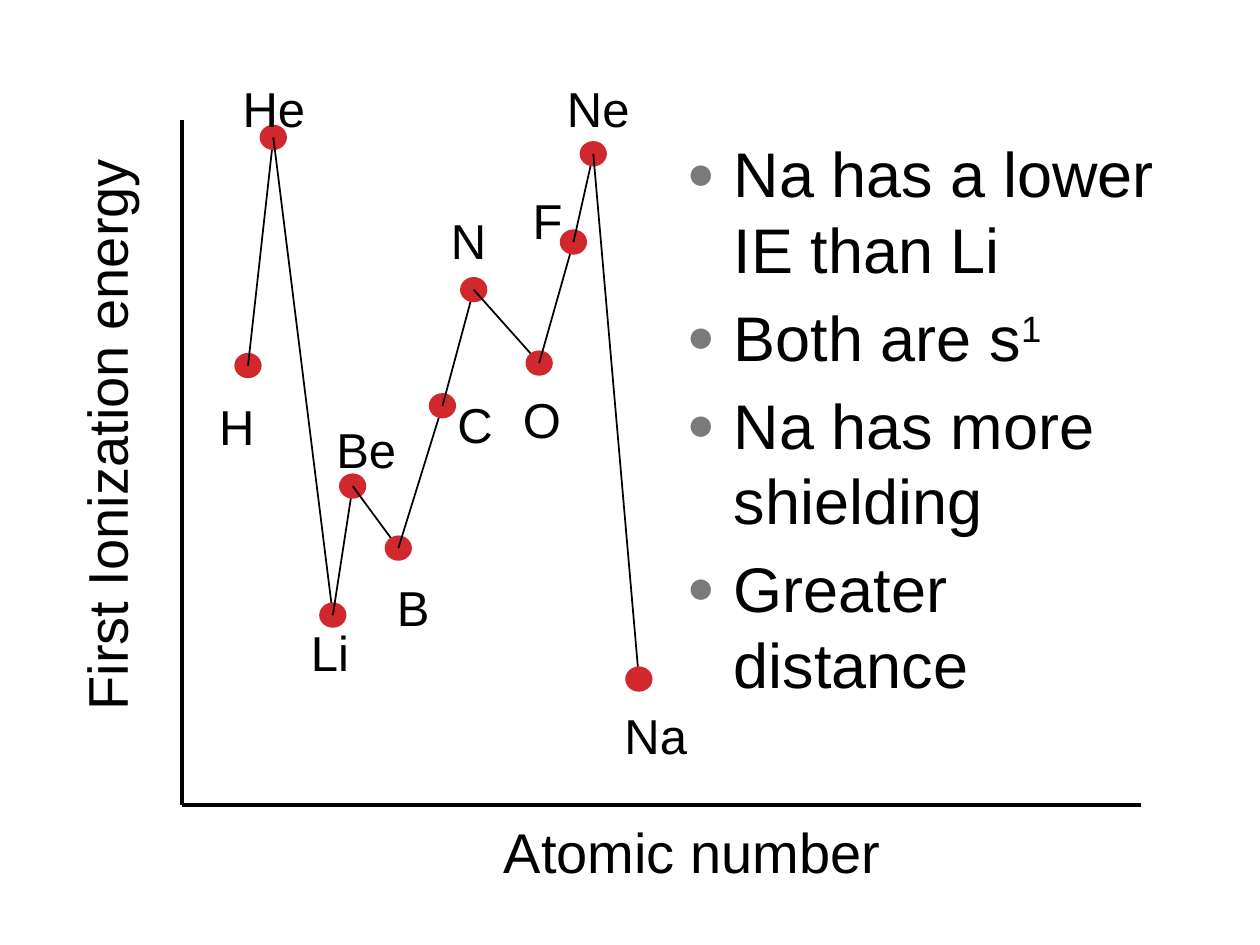
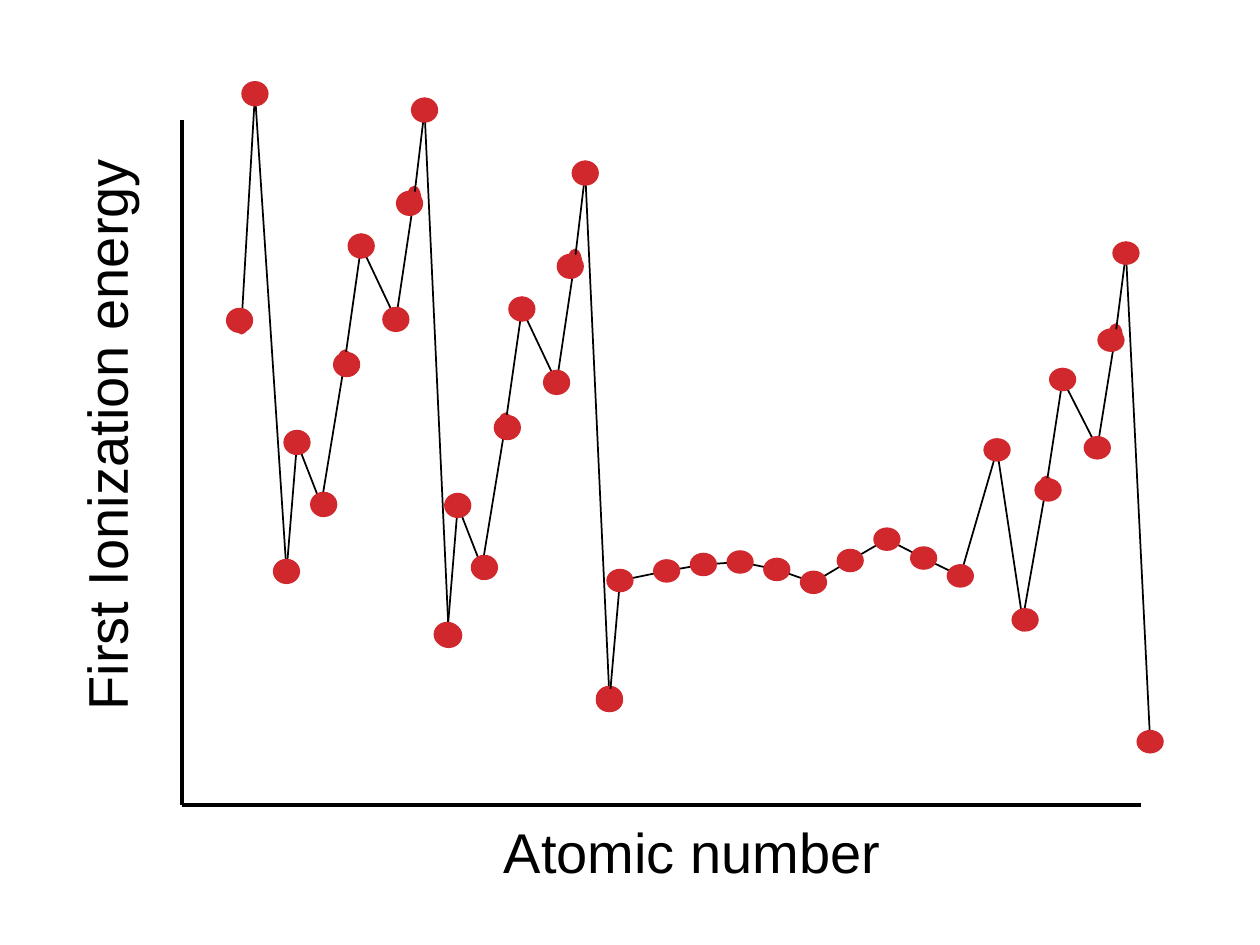
"""Build two slides that plot first ionization energy against atomic number."""
import dataclasses
import itertools

import pptx
import pptx.dml.color
import pptx.enum.shapes
import pptx.enum.text
import pptx.oxml.ns
import pptx.util
from lxml import etree

Cm = pptx.util.Cm
Pt = pptx.util.Pt
qn = pptx.oxml.ns.qn

COLORS = {"ink": "000000", "dot": "D1282E", "bullet": "7A7A7A"}
FONT = "Arial"
SIZES = {"label": 28, "axis": 32, "body": 36}
LINE_WEIGHTS = {"link": 1, "axis": 2}
DOT_WIDTH, DOT_HEIGHT = 0.55, 0.51
LABEL_WIDTHS = {1: 1.55, 2: 1.85}
LABEL_HEIGHT = 1.45
AXIS_LEFT, AXIS_RIGHT = 3.67, 23.01
AXIS_TOP, AXIS_BOTTOM = 2.41, 16.23
BULLET_INDENT = 0.95


@dataclasses.dataclass
class Atom:
    """Hold an element's dot centre, the offset of its label and the drift of its dot when squeezed."""
    symbol: str
    centre: tuple
    label_offset: tuple
    drift: tuple = (0, 0)


@dataclasses.dataclass
class Frame:
    """Map the base curve to a place on a slide by scaling and shifting it."""
    x_scale: float = 1
    y_scale: float = 1
    x_shift: float = 0
    y_shift: float = 0

    def place(self, point):
        x, y = point
        return x * self.x_scale + self.x_shift, y * self.y_scale + self.y_shift


HYDROGEN_TO_SODIUM = [
    Atom("H", (5, 7.37), (-0.83, 0.5), (-0.04, -0.03)),
    Atom("He", (5.51, 2.77), (-0.87, -1.32)),
    Atom("Li", (6.71, 12.4), (-0.69, 0.02)),
    Atom("Be", (7.11, 9.8), (-0.58, -1.47)),
    Atom("B", (8.03, 11.05), (-0.28, 0.46), (0.05, 0)),
    Atom("C", (8.92, 8.18), (0.05, -0.36), (0.04, 0.05)),
    Atom("N", (9.55, 5.84), (-0.71, -1.72)),
    Atom("O", (10.87, 7.32), (-0.58, 0.4)),
    Atom("F", (11.56, 4.88), (-1.07, -1.17), (-0.09, 0.1)),
    Atom("Ne", (11.96, 3.1), (-0.78, -1.65)),
    Atom("Na", (12.88, 13.69), (-0.54, 0.41)),
]
LITHIUM_TO_SODIUM = HYDROGEN_TO_SODIUM[2:]
S_BLOCK = LITHIUM_TO_SODIUM[:2]
P_BLOCK_ONWARD = LITHIUM_TO_SODIUM[2:]

SQUEEZE, LOWERED = 0.53, 0.93
FULL_SIZE = Frame()
FIRST_PERIODS = Frame(SQUEEZE, 1, 2.22, -0.88)
THIRD_PERIOD = Frame(SQUEEZE, 1, 5.46, 0.39)
FOURTH_S_BLOCK = Frame(SQUEEZE, LOWERED, 8.73, 2.59)
FOURTH_P_BLOCK = Frame(SQUEEZE, LOWERED, 16.36, 2.22)

METAL_LEFT, METAL_STEP = 13.44, 0.74
METAL_HEIGHTS = [11.51, 11.38, 11.33, 11.48, 11.74, 11.3, 10.87, 11.25, 11.61, 9.07]

SODIUM_NOTES = [
    [("Na has a lower IE than Li", False)],
    [("Both are s", False), ("1", True)],
    [("Na has more shielding", False)],
    [("Greater distance", False)],
]


class Deck:
    """Hold the shared style and the current slide."""

    def __init__(self):
        self.presentation = pptx.Presentation()
        self.presentation.slide_width = Cm(25.4)
        self.presentation.slide_height = Cm(19.05)
        self.slide = None

    def color(self, name):
        return pptx.dml.color.RGBColor.from_string(COLORS[name])

    def add_slide(self, layout):
        self.slide = self.presentation.slides.add_slide(
            self.presentation.slide_layouts.get_by_name(layout))
        title = self.slide.shapes.title
        if title is not None:
            title.element.getparent().remove(title.element)

    def run(self, paragraph, text, role, raised=False):
        run = paragraph.add_run()
        run.text = text
        run.font.name = FONT
        run.font.size = Pt(SIZES[role])
        run.font.color.rgb = self.color("ink")
        if raised:
            run._r.get_or_add_rPr().set("baseline", "30000")

    def text(self, text, left, top, width, height, role, rotation=0):
        box = self.slide.shapes.add_textbox(Cm(left), Cm(top), Cm(width), Cm(height))
        box.rotation = rotation
        box.text_frame.word_wrap = True
        self.run(box.text_frame.paragraphs[0], text, role)

    def stroke(self, shape, role):
        shape.line.color.rgb = self.color("ink")
        shape.line.width = Pt(LINE_WEIGHTS[role])

    def line(self, start, end, role="link"):
        connector = self.slide.shapes.add_connector(
            pptx.enum.shapes.MSO_CONNECTOR.STRAIGHT,
            *(Cm(value) for value in (*start, *end)))
        self.stroke(connector, role)
        etree.SubElement(connector._element.spPr, qn("a:effectLst"))

    def curve(self, points):
        corners = [(Cm(x), Cm(y)) for x, y in points]
        builder = self.slide.shapes.build_freeform(*corners[0])
        builder.add_line_segments(corners[1:], close=False)
        shape = builder.convert_to_shape()
        shape.shadow.inherit = False
        shape.fill.background()
        self.stroke(shape, "link")

    def dot(self, centre, x_scale=1, y_scale=1):
        width, height = DOT_WIDTH * x_scale, DOT_HEIGHT * y_scale
        x, y = centre
        shape = self.slide.shapes.add_shape(
            pptx.enum.shapes.MSO_SHAPE.OVAL,
            Cm(x - width / 2), Cm(y - height / 2), Cm(width), Cm(height))
        shape.shadow.inherit = False
        shape.fill.solid()
        shape.fill.fore_color.rgb = self.color("dot")
        shape.line.fill.background()

    def axes(self):
        corner = (AXIS_LEFT, AXIS_BOTTOM)
        self.line((AXIS_LEFT, AXIS_TOP), corner, "axis")
        self.line((AXIS_RIGHT, AXIS_BOTTOM), corner, "axis")
        self.text("First Ionization energy", -3.73, 7.92, 11.71, 1.6, "axis", 270)
        self.text("Atomic number", 9.91, 16.36, 8.2, 1.6, "axis")

    def linked_dots(self, atoms, frame):
        centres = [frame.place(atom.centre) for atom in atoms]
        for centre, following in itertools.zip_longest(centres, centres[1:]):
            self.dot(centre, frame.x_scale, frame.y_scale)
            if following:
                self.line(centre, following)

    def round_dots(self, atoms, frame):
        for atom in atoms:
            x, y = frame.place(atom.centre)
            x_drift, y_drift = atom.drift
            self.dot((x + x_drift, y + y_drift), y_scale=frame.y_scale)

    def symbols(self, atoms):
        for atom in atoms:
            left, top = (sum(pair) for pair in zip(atom.centre, atom.label_offset))
            width = LABEL_WIDTHS[len(atom.symbol)]
            self.text(atom.symbol, left, top, width, LABEL_HEIGHT, "label")

    def bullet(self, paragraph):
        properties = paragraph._p.get_or_add_pPr()
        properties.set("marL", str(Cm(BULLET_INDENT)))
        properties.set("indent", str(Cm(-BULLET_INDENT)))
        bullet_color = etree.SubElement(properties, qn("a:buClr"))
        etree.SubElement(bullet_color, qn("a:srgbClr"), val=COLORS["bullet"])
        etree.SubElement(properties, qn("a:buSzPct"), val="75000")
        etree.SubElement(properties, qn("a:buChar"), char="●")

    def bullets(self, items, left, top, width, height):
        body = self.slide.placeholders[1]
        body.left, body.top = Cm(left), Cm(top)
        body.width, body.height = Cm(width), Cm(height)
        frame = body.text_frame
        frame.auto_size = pptx.enum.text.MSO_AUTO_SIZE.NONE
        frame.vertical_anchor = pptx.enum.text.MSO_ANCHOR.TOP
        for index, runs in enumerate(items):
            paragraph = frame.add_paragraph() if index else frame.paragraphs[0]
            self.bullet(paragraph)
            paragraph.space_before = Pt(7 if index else 0)
            for text, raised in runs:
                self.run(paragraph, text, "body", raised)


def build_labelled_slide(deck):
    deck.add_slide("Title and Content")
    deck.axes()
    deck.linked_dots(HYDROGEN_TO_SODIUM, FULL_SIZE)
    deck.symbols(HYDROGEN_TO_SODIUM)
    deck.bullets(SODIUM_NOTES, 13.59, 2.59, 10.72, 14.4)


def build_trend_slide(deck):
    deck.add_slide("Blank")
    metals = [(METAL_LEFT + METAL_STEP * index, height)
              for index, height in enumerate(METAL_HEIGHTS)]
    before_metals = FOURTH_S_BLOCK.place(S_BLOCK[-1].centre)
    after_metals = FOURTH_P_BLOCK.place(P_BLOCK_ONWARD[0].centre)
    deck.curve([before_metals, *metals, after_metals])
    deck.axes()
    stretches = [
        (HYDROGEN_TO_SODIUM, FIRST_PERIODS),
        (LITHIUM_TO_SODIUM, THIRD_PERIOD),
        (S_BLOCK, FOURTH_S_BLOCK),
        (P_BLOCK_ONWARD, FOURTH_P_BLOCK),
    ]
    for atoms, frame in stretches:
        deck.linked_dots(atoms, frame)
        deck.round_dots(atoms, frame)
    for centre in metals:
        deck.dot(centre, y_scale=LOWERED)


def main():
    deck = Deck()
    build_labelled_slide(deck)
    build_trend_slide(deck)
    deck.presentation.save("out.pptx")


if __name__ == "__main__":
    main()
